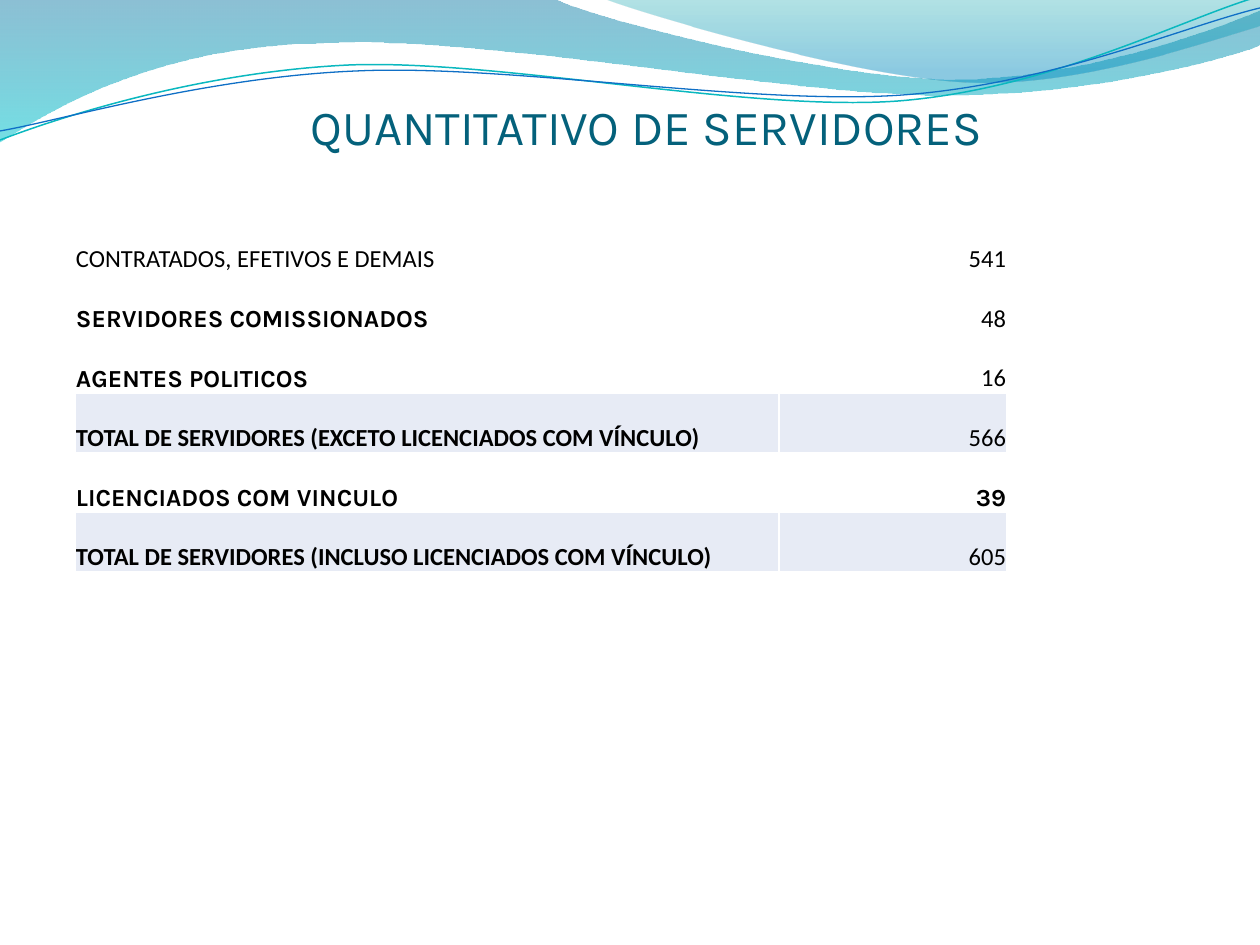
from dataclasses import dataclass

import pptx
import pptx.dml.color
import pptx.enum.text
import pptx.oxml
import pptx.oxml.ns
import pptx.util

PX = 914400 / 126
NAMESPACE = pptx.oxml.ns.nsdecls("a")
LEFT, CENTER, RIGHT = (getattr(pptx.enum.text.PP_ALIGN, name) for name in ("LEFT", "CENTER", "RIGHT"))


@dataclass
class Outline:
    """A start point, then segments of one point (line) or three (cubic curve)."""
    start: tuple
    segments: list


@dataclass
class Wave:
    outline: Outline
    stops: list  # position %, colour, opacity %


@dataclass
class Ribbon:
    outline: Outline
    colour: str
    weight: float


@dataclass
class Row:
    label: str
    value: str
    label_font: str = "Karla"
    value_font: str = "Calibri"
    label_bold: bool = True
    value_bold: bool = False
    total: bool = False
    borders: str = ""


WAVES = [
    Wave(Outline((0, 0), [
        [(554, -1)],
        [(600, 21), (837, 79), (955, 79)],
        [(1075, 79), (1207, 33), (1260, 11)],
        [(1261, 45)],
        [(1239, 55), (1096, 96), (940, 95)],
        [(784, 95), (481, 35), (324, 43)],
        [(163, 45), (58, 105), (-1, 142)],
    ]), [(0, "0074A1", 45), (100, "00C6CF", 55)]),
    Wave(Outline((604, -1), [
        [(641, 14), (859, 78), (969, 82)],
        [(1079, 87), (1211, 40), (1260, 26)],
        [(1260, 0)],
    ]), [(0, "00A1A9", 30), (80, "008BBF", 45)]),
]
RIBBONS = [
    Ribbon(Outline((0, 140), [
        [(60, 117), (199, 72), (349, 65)],
        [(498, 59), (747, 112), (898, 101)],
        [(1050, 89), (1182, 19), (1257, -3)],
    ]), "0AB8BF", 0.85),
    Ribbon(Outline((0, 131), [
        [(59, 121), (207, 77), (357, 71)],
        [(508, 64), (752, 106), (903, 95)],
        [(1053, 84), (1185, 26), (1260, 8)],
    ]), "0F6FC6", 0.75),
]
ROWS = [
    Row("CONTRATADOS, EFETIVOS E DEMAIS", "541", label_font="Calibri", label_bold=False),
    Row("SERVIDORES COMISSIONADOS", "48"),
    Row("AGENTES POLITICOS", "16"),
    Row("TOTAL DE SERVIDORES (EXCETO LICENCIADOS COM VÍNCULO)", "566",
        label_font="Calibri", total=True, borders="LRB"),
    Row("LICENCIADOS COM VINCULO", "39", value_font="Karla", value_bold=True, borders="LRTB"),
    Row("TOTAL DE SERVIDORES (INCLUSO LICENCIADOS COM VÍNCULO)", "605",
        label_font="Calibri", total=True, borders="LRTB"),
]


def px(length: float) -> int:
    return round(length * PX)


def rgb(colour: str) -> pptx.dml.color.RGBColor:
    return pptx.dml.color.RGBColor.from_string(colour)


def set_values(target, values: dict) -> None:
    for name, value in values.items():
        setattr(target, name, value)


def white_line(tag: str, points: float):
    return pptx.oxml.parse_xml(
        f'<a:{tag} {NAMESPACE} w="{round(points * 12700)}"><a:solidFill>'
        f'<a:srgbClr val="FFFFFF"/></a:solidFill></a:{tag}>')


def add_outline(page, outline: Outline, close: bool):
    builder = page.shapes.build_freeform(*outline.start, scale=PX)
    builder.add_line_segments([point for segment in outline.segments for point in segment], close=close)
    shape = builder.convert_to_shape()
    shape.shadow.inherit = False

    # Join each three control points into one cubic curve
    steps = iter(list(shape.element.iter(pptx.oxml.ns.qn("a:lnTo"))))
    for segment in outline.segments:
        lines = [next(steps) for _ in segment]
        if len(lines) == 3:
            curve = pptx.oxml.parse_xml(f"<a:cubicBezTo {NAMESPACE}/>")
            lines[0].addprevious(curve)
            for line in lines:
                curve.append(line[0])
                line.getparent().remove(line)
    return shape


def add_wave(page, wave: Wave) -> None:
    shape = add_outline(page, wave.outline, close=True)
    shape.line.fill.background()
    shape.fill.background()
    stops = "".join(
        f'<a:gs pos="{position * 1000}"><a:srgbClr val="{colour}">'
        f'<a:alpha val="{opacity * 1000}"/></a:srgbClr></a:gs>'
        for position, colour, opacity in wave.stops)
    properties = shape.element.spPr
    properties.replace(properties.find(pptx.oxml.ns.qn("a:noFill")), pptx.oxml.parse_xml(
        f'<a:gradFill {NAMESPACE} rotWithShape="1"><a:gsLst>{stops}</a:gsLst>'
        '<a:lin ang="5400000" scaled="0"/></a:gradFill>'))


def add_ribbon(page, ribbon: Ribbon) -> None:
    shape = add_outline(page, ribbon.outline, close=False)
    shape.fill.background()
    shape.line.color.rgb = rgb(ribbon.colour)
    shape.line.width = pptx.util.Pt(ribbon.weight)


def write(para, text: str, align, colour: str, font: dict):
    para.alignment = align
    span = para.add_run()
    span.text = text
    set_values(span.font, font)
    span.font.color.rgb = rgb(colour)
    return span


def add_title(page, text: str) -> None:
    box = page.shapes.add_textbox(px(74), px(86), px(1144), px(69))
    set_values(box.text_frame, dict(
        word_wrap=True, vertical_anchor=pptx.enum.text.MSO_ANCHOR.BOTTOM,
        margin_left=0, margin_right=0, margin_top=px(6), margin_bottom=0))
    write(box.text_frame.paragraphs[0], text, CENTER, "04617B",
          dict(name="Karla", size=pptx.util.Pt(28)))


def fill_cell(cell, text: str, align, name: str, bold: bool, row: Row) -> None:
    set_values(cell, dict(
        vertical_anchor=pptx.enum.text.MSO_ANCHOR.BOTTOM,
        margin_left=px(1), margin_right=px(1), margin_top=px(1), margin_bottom=0))
    span = write(cell.text_frame.paragraphs[0], text, align, "000000",
                 dict(name=name, size=pptx.util.Pt(14), bold=bold))
    if not row.total:
        span.font._element.insert(0, white_line("ln", 0.75))
    for side in row.borders:
        cell._tc.get_or_add_tcPr().append(white_line(f"ln{side}", 1))
    if row.total:
        cell.fill.solid()
        cell.fill.fore_color.rgb = rgb("E7EBF5")
    else:
        cell.fill.background()


def add_staff_table(page, rows: list) -> None:
    widths, height = (704, 228), 357
    table = page.shapes.add_table(len(rows), len(widths), px(75), px(215),
                                  px(sum(widths)), px(height)).table
    set_values(table, dict(first_row=False, horz_banding=False))
    for column, width in zip(table.columns, widths):
        column.width = px(width)
    for index, row in enumerate(rows):
        table.rows[index].height = px(height / len(rows))
        fill_cell(table.cell(index, 0), row.label, LEFT, row.label_font, row.label_bold, row)
        fill_cell(table.cell(index, 1), row.value, RIGHT, row.value_font, row.value_bold, row)


def main() -> None:
    deck = pptx.Presentation()
    set_values(deck, dict(slide_width=px(1260), slide_height=px(945)))
    page = deck.slides.add_slide(deck.slide_layouts[6])

    # Decorative header
    for wave in WAVES:
        add_wave(page, wave)
    for ribbon in RIBBONS:
        add_ribbon(page, ribbon)

    # Title and staff numbers
    add_title(page, "QUANTITATIVO DE SERVIDORES")
    add_staff_table(page, ROWS)
    deck.save("out.pptx")


if __name__ == "__main__":
    main()
